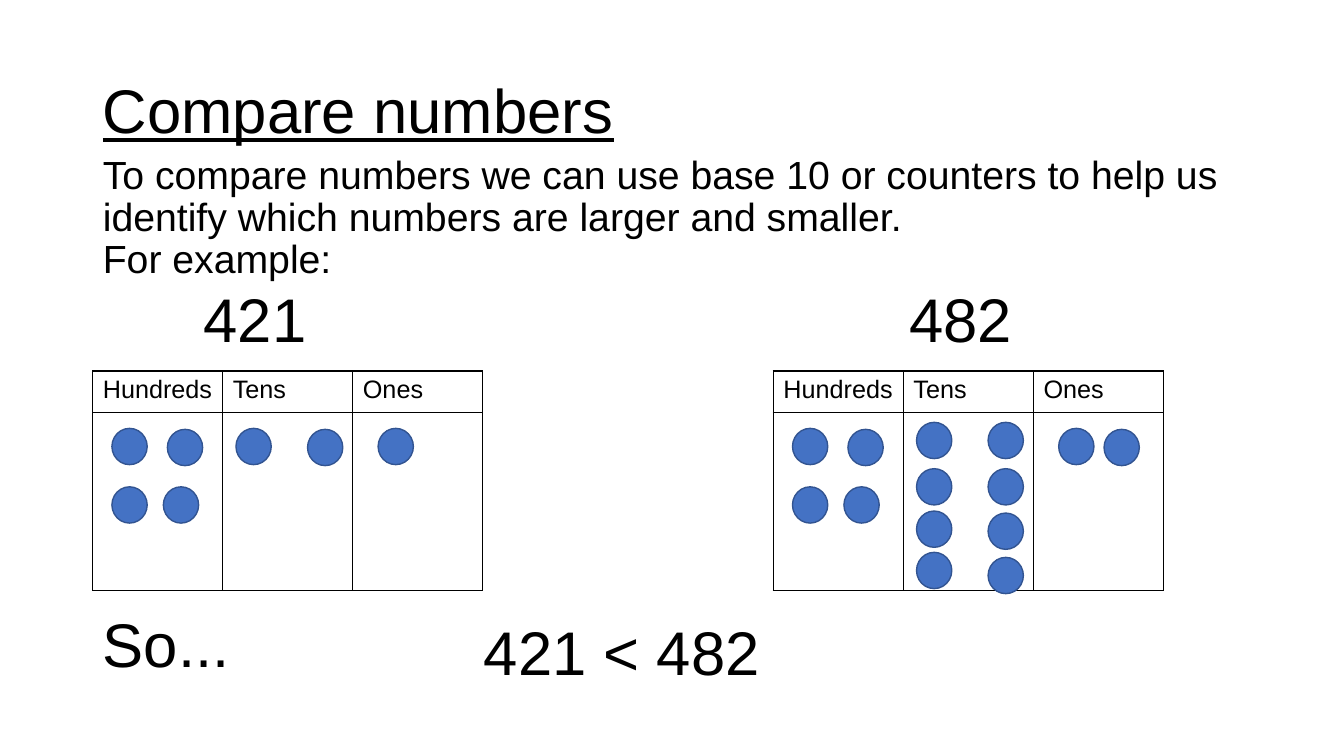
from lxml.etree import SubElement
from pptx import Presentation
from pptx.dml.color import RGBColor
from pptx.enum.shapes import MSO_SHAPE
from pptx.enum.text import MSO_ANCHOR, MSO_AUTO_SIZE, PP_ALIGN
from pptx.oxml.ns import qn
from pptx.util import Pt

PX = 9144  # 100 px to the inch
BLACK = RGBColor(0x00, 0x00, 0x00)
WHITE = RGBColor(0xFF, 0xFF, 0xFF)
BLUE = RGBColor(0x44, 0x72, 0xC4)
DARK_BLUE = RGBColor(0x32, 0x54, 0x91)

TABLE_TOP, COLUMN_WIDTH, ROW_HEIGHTS = 368, 129, (41, 177)
PLACES = ("Hundreds", "Tens", "Ones")
COUNTER_WIDTH, COUNTER_HEIGHT = 35, 36

# Counter positions: x from the left edge of the table, y from the slide top
SHARED_COUNTERS = [(19, 425), (74, 426), (19, 483), (70, 483), (283, 425)]
TENS_OF_421 = [(142, 425), (213, 426)]
TENS_OF_482 = ([(142, y) for y in (419, 465, 507, 548)]
               + [(213, y) for y in (419, 465, 509, 553)])
SECOND_ONE = [(328, 426)]
PLACE_VALUE_CHARTS = [
    (92, SHARED_COUNTERS + TENS_OF_421),
    (767, SHARED_COUNTERS + TENS_OF_482 + SECOND_ONE),
]

# Text, size, space before in points
EXPLANATION = [
    ("To compare numbers we can use base 10 or counters to help us "
     "identify which numbers are larger and smaller.", 28, 0),
    ("For example:", 28, 0),
    ("So...", 44, 237),
]

# Text, left, top, width in px
NUMBER_LABELS = [
    ("421", 202, 279, 130),
    ("482", 902, 279, 130),
    ("421 < 482", 480, 609, 300),
]


def place(placeholder, left, top, width, height, anchor):
    placeholder.left, placeholder.top = left * PX, top * PX
    placeholder.width, placeholder.height = width * PX, height * PX
    frame = placeholder.text_frame
    frame.word_wrap = True
    frame.auto_size = MSO_AUTO_SIZE.NONE
    frame.vertical_anchor = anchor
    return frame


def write(paragraph, text, size):
    paragraph.alignment = PP_ALIGN.LEFT
    run = paragraph.add_run()
    run.text = text
    run.font.name = "Arial"
    run.font.size = Pt(size)
    run.font.color.rgb = BLACK
    return run


prs = Presentation()
prs.slide_width, prs.slide_height = 1333 * PX, 750 * PX
slide = prs.slides.add_slide(prs.slide_layouts[1])
slide.background.fill.solid()
slide.background.fill.fore_color.rgb = WHITE

title = place(slide.shapes.title, 92, 40, 1150, 145, MSO_ANCHOR.MIDDLE)
title.paragraphs[0].line_spacing = 0.9
write(title.paragraphs[0], "Compare numbers", 44).font.underline = True

body = place(slide.placeholders[1], 92, 149, 1150, 578, MSO_ANCHOR.TOP)
for index, (text, size, space_before) in enumerate(EXPLANATION):
    paragraph = body.add_paragraph() if index else body.paragraphs[0]
    paragraph.line_spacing = 0.9
    paragraph.space_before = Pt(space_before)
    paragraph.space_after = Pt(0)
    write(paragraph, text, size)
    properties = paragraph._p.get_or_add_pPr()
    properties.set("marL", "0")
    properties.set("indent", "0")
    SubElement(properties, qn("a:buNone"))

for text, left, top, width in NUMBER_LABELS:
    label = slide.shapes.add_textbox(left * PX, top * PX, width * PX, 70 * PX).text_frame
    label.word_wrap = True
    label.margin_left = label.margin_right = label.margin_top = label.margin_bottom = 0
    write(label.paragraphs[0], text, 44)

for chart_left, counters in PLACE_VALUE_CHARTS:
    place_values = slide.shapes.add_table(
        len(ROW_HEIGHTS), len(PLACES), chart_left * PX, TABLE_TOP * PX,
        len(PLACES) * COLUMN_WIDTH * PX, sum(ROW_HEIGHTS) * PX).table
    place_values.horz_banding = False
    for column in place_values.columns:
        column.width = COLUMN_WIDTH * PX
    for row, height in zip(place_values.rows, ROW_HEIGHTS):
        row.height = height * PX
    for cell in place_values.iter_cells():
        cell_properties = cell._tc.get_or_add_tcPr()
        for side in ("a:lnL", "a:lnR", "a:lnT", "a:lnB"):
            border = SubElement(cell_properties, qn(side), w=str(Pt(1)))
            border_fill = SubElement(border, qn("a:solidFill"))
            SubElement(border_fill, qn("a:srgbClr"), val=str(BLACK))
        cell.fill.background()
    for column, name in enumerate(PLACES):
        heading = write(place_values.cell(0, column).text_frame.paragraphs[0], name, 18)
        heading.font.bold = False

    for x, y in counters:
        counter = slide.shapes.add_shape(
            MSO_SHAPE.OVAL, (chart_left + x) * PX, y * PX,
            COUNTER_WIDTH * PX, COUNTER_HEIGHT * PX)
        counter.shadow.inherit = False
        counter.fill.solid()
        counter.fill.fore_color.rgb = BLUE
        counter.line.color.rgb = DARK_BLUE
        counter.line.width = Pt(1)

prs.save("out.pptx")
